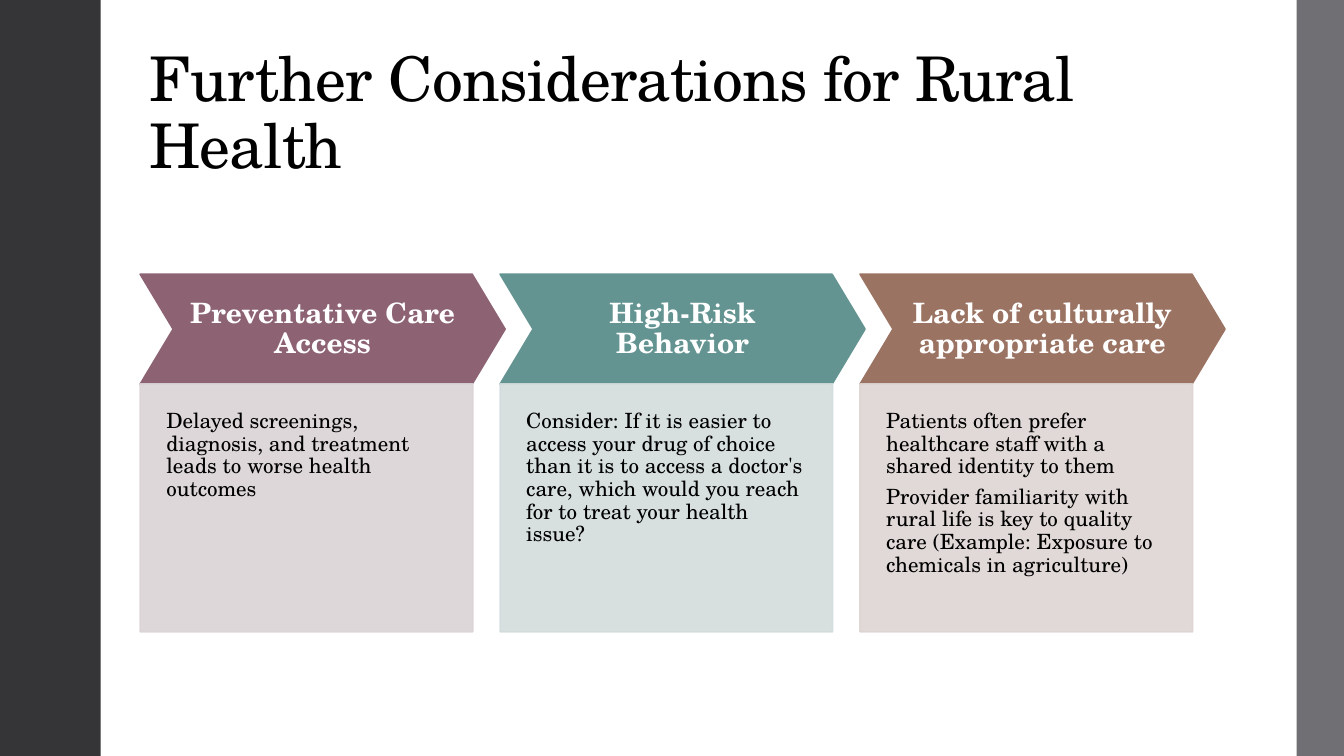
"""Build the slide on further considerations for rural health."""
from lxml.etree import SubElement
from pptx import Presentation
from pptx.dml.color import RGBColor
from pptx.enum.shapes import MSO_SHAPE
from pptx.enum.text import MSO_ANCHOR, PP_ALIGN
from pptx.oxml.ns import qn
from pptx.util import Inches, Pt


def add_block(kind, left, top, width, height, color, opacity=100, outlined=True):
    """Add a filled preset shape, with an outline of the same colour if wanted."""
    block = page.shapes.add_shape(kind, Inches(left), Inches(top), Inches(width), Inches(height))
    block.shadow.inherit = False
    block.fill.solid()
    block.fill.fore_color.rgb = RGBColor.from_string(color)
    if outlined:
        block.line.color.rgb = RGBColor.from_string(color)
        block.line.width = Pt(1.1)
    else:
        block.line.fill.background()
    if opacity < 100:
        for tint in block._element.spPr.iter(qn("a:srgbClr")):
            SubElement(tint, qn("a:alpha"), val=str(opacity * 1000))
    return block


def write(box, *texts, size, color="000000", bold=False, align=PP_ALIGN.LEFT,
          anchor=MSO_ANCHOR.TOP, insets=(0.1, 0.05, 0.1, 0.05), after=0, tracking=0):
    """Write one paragraph per text; insets run left, top, right, bottom."""
    frame = box.text_frame
    frame.word_wrap = True
    frame.vertical_anchor = anchor
    (frame.margin_left, frame.margin_top,
     frame.margin_right, frame.margin_bottom) = map(Inches, insets)
    for index, text in enumerate(texts):
        para = frame.add_paragraph() if index else frame.paragraphs[0]
        para.alignment = align
        para.line_spacing = 0.9
        para.space_after = Pt(after)
        span = para.add_run()
        span.text = text
        span.font.name = "TeX Gyre Schola"
        span.font.size = Pt(size)
        span.font.bold = bold
        span.font.color.rgb = RGBColor.from_string(color)
        if tracking:
            span.font._element.set("spc", str(int(tracking * 100)))


deck = Presentation()
deck.slide_width = Inches(13.33)
deck.slide_height = Inches(7.5)
page = deck.slides.add_slide(deck.slide_layouts[6])

add_block(MSO_SHAPE.RECTANGLE, 0, 0, 1, 7.5, "353537", outlined=False)
add_block(MSO_SHAPE.RECTANGLE, 12.86, 0, 0.47, 7.5, "6F6F74", outlined=False)

title = page.shapes.add_textbox(Inches(1.38), Inches(0.4), Inches(10.78), Inches(1.45))
write(title, "Further Considerations for Rural Health", size=44,
      anchor=MSO_ANCHOR.BOTTOM, tracking=-0.5)

considerations = [
    ("Preventative Care Access", "8D6374", "DBD3D6",
     ["Delayed screenings, diagnosis, and treatment leads to worse health outcomes"]),
    ("High-Risk Behavior", "639491", "D3DCDC",
     ["Consider: If it is easier to access your drug of choice than it is to access "
      "a doctor's care, which would you reach for to treat your health issue?"]),
    ("Lack of culturally appropriate care", "9B7362", "DED5D3",
     ["Patients often prefer healthcare staff with a shared identity to them",
      "Provider familiarity with rural life is key to quality care "
      "(Example: Exposure to chemicals in agriculture)"]),
]
for column, (heading, strong, pale, details) in enumerate(considerations):
    left = 1.39 + column * 3.57
    chevron = add_block(MSO_SHAPE.CHEVRON, left, 2.72, 3.62, 1.09, strong)
    chevron.adjustments[0] = 0.3
    write(chevron, heading, size=20, color="FFFFFF", bold=True, align=PP_ALIGN.CENTER,
          anchor=MSO_ANCHOR.MIDDLE, insets=(0.13,) * 4, after=7)
    card = add_block(MSO_SHAPE.RECTANGLE, left, 3.81, 3.3, 2.46, pale, opacity=90)
    write(card, *details, size=15, insets=(0.26, 0.26, 0.26, 0.52), after=5.6)

deck.save("out.pptx")
